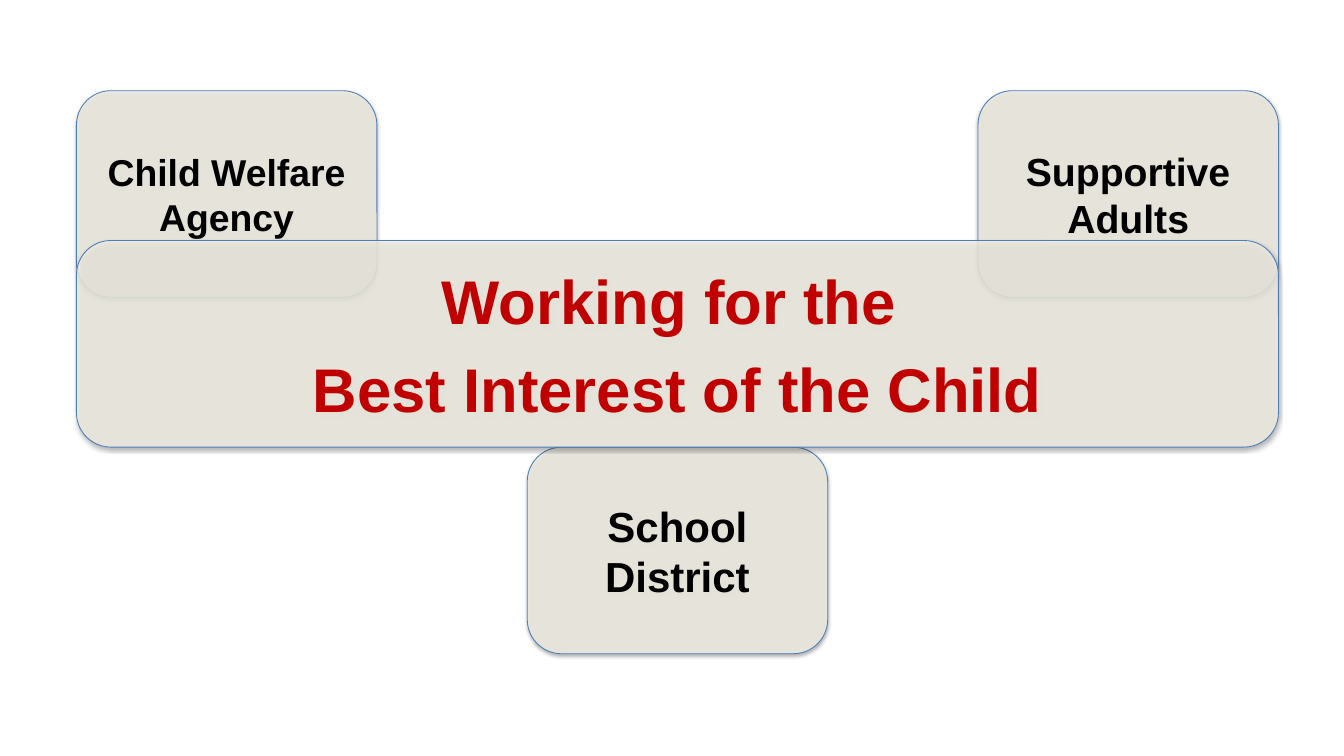
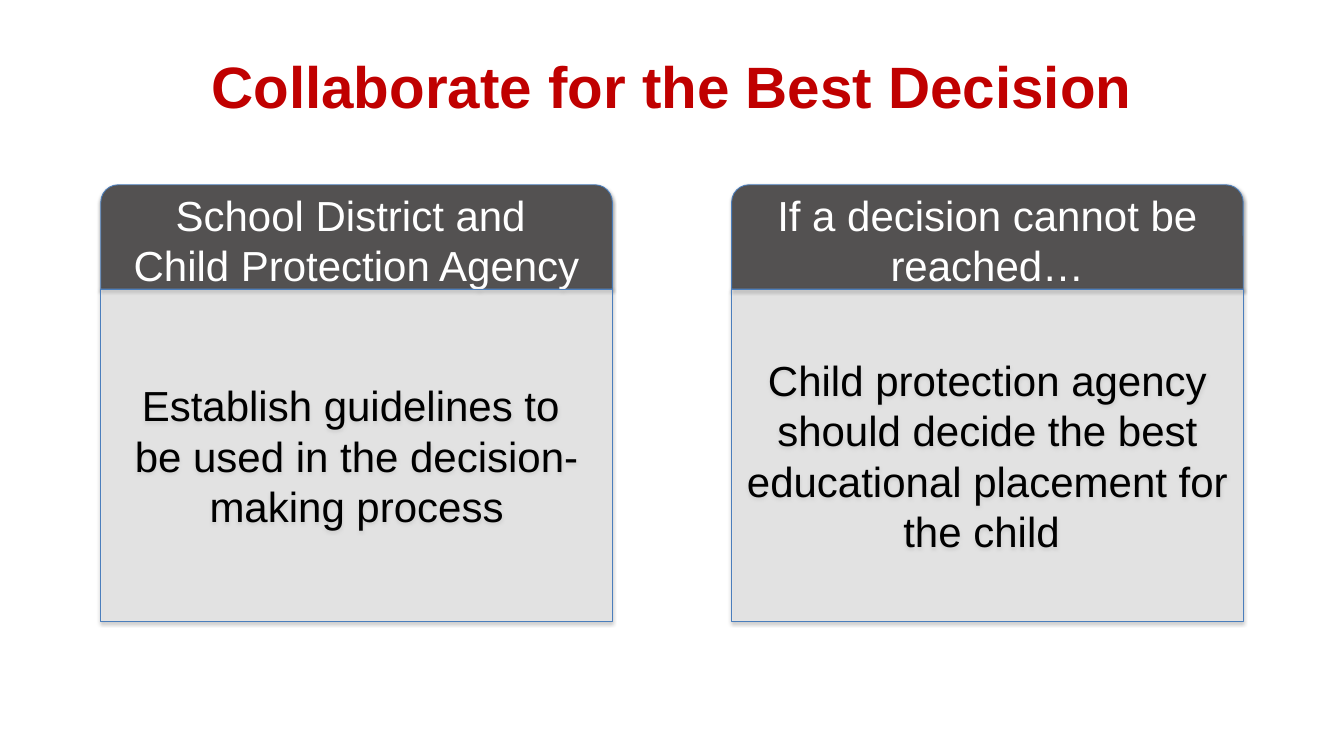
from dataclasses import dataclass

import pptx
import pptx.dml.color
import pptx.enum.shapes
import pptx.enum.text
import pptx.oxml
import pptx.oxml.ns
import pptx.util

SHAPES = pptx.enum.shapes.MSO_SHAPE
ANCHOR = pptx.enum.text.MSO_ANCHOR
CENTER = pptx.enum.text.PP_ALIGN.CENTER
Inches = pptx.util.Inches

WIDTH, HEIGHT = 16, 9
RED, BLACK, WHITE = "C00000", "000000", "FFFFFF"
BEIGE, CHARCOAL, PALE, OUTLINE = "EEECE1", "535151", "F2F2F2", "4B7EBC"

MARGIN, TOP = 0.91, 1.08
COLUMN = (WIDTH - 2 * MARGIN + 0.13) / 4
ROW = 2.46

PANEL_LEFT, PANEL_TOP, PANEL_WIDTH = 1.2, 2.2, 6.09
PANEL_STEP = WIDTH - 2 * PANEL_LEFT - PANEL_WIDTH
HEADER_HEIGHT, BODY_HEIGHT = 1.24, 3.96

SHADOW = (
    '<a:outerShdw {ns} blurRad="39370" dist="22860" dir="5400000" rotWithShape="0">'
    '<a:srgbClr val="000000"><a:alpha val="35000"/></a:srgbClr></a:outerShdw>'
).format(ns=pptx.oxml.ns.nsdecls("a"))


@dataclass(frozen=True)
class Style:
    size: float
    color: str
    bold: bool = False
    space: float = 0


@dataclass(frozen=True)
class Block:
    column: float
    row: float
    columns: float
    lines: tuple[str, ...]
    style: Style


@dataclass(frozen=True)
class Panel:
    header: tuple[str, ...]
    body: tuple[str, ...]


BLOCKS = (
    Block(3, 0, 1, ("Supportive Adults",), Style(33.6, BLACK, True)),
    Block(1.5, 1.725, 1, ("School District",), Style(36, BLACK, True)),
    Block(0, 0, 1, ("Child Welfare Agency",), Style(32, BLACK, True)),
    Block(0, 0.725, 4, ("Working for the ", "Best Interest of the Child"),
          Style(52.8, RED, True, 12.5)),
)
PANELS = (
    Panel(("School District and ", "Child Protection Agency"),
          ("Establish guidelines to ", "be used in the decision-making process")),
    Panel(("If a decision cannot be reached…",),
          ("Child protection agency should decide the best "
           "educational placement for the child ",)),
)
TITLE = Style(50, RED, True)
HEADER = Style(36, WHITE)
BODY = Style(36, BLACK)


def color(value: str) -> pptx.dml.color.RGBColor:
    return pptx.dml.color.RGBColor.from_string(value)


def apply(target, values: dict) -> None:
    for name, value in values.items():
        setattr(target, name, value)


def write(box, lines: tuple[str, ...], style: Style, **frame_format) -> None:
    frame = box.text_frame
    apply(frame, {"word_wrap": True, **frame_format})
    for index, line in enumerate(lines):
        para = frame.add_paragraph() if index else frame.paragraphs[0]
        para.alignment = CENTER
        if index and style.space:
            para.space_before = pptx.util.Pt(style.space)
        span = para.add_run()
        span.text = line
        apply(span.font, {"name": "Arial", "size": pptx.util.Pt(style.size),
                          "bold": style.bold})
        span.font.color.rgb = color(style.color)


def add_card(shapes, preset, left: float, top: float, width: float, height: float,
             fill: str, opacity: int, lines: tuple[str, ...], style: Style) -> None:
    box = shapes.add_shape(preset, Inches(left), Inches(top),
                           Inches(width), Inches(height))
    box.fill.solid()
    box.fill.fore_color.rgb = color(fill)
    box.line.color.rgb = color(OUTLINE)
    box.line.width = pptx.util.Pt(0.75)
    box.shadow.inherit = False
    properties = box._element.spPr
    properties.find(pptx.oxml.ns.qn("a:effectLst")).append(pptx.oxml.parse_xml(SHADOW))
    if opacity < 100:
        tint = properties.find(pptx.oxml.ns.qn("a:solidFill"))[0]
        alpha = tint.makeelement(pptx.oxml.ns.qn("a:alpha"), {"val": str(opacity * 1000)})
        tint.append(alpha)
    write(box, lines, style, vertical_anchor=ANCHOR.MIDDLE)


def add_title(page, text: str) -> None:
    box = page.shapes.add_textbox(Inches(0.05 * WIDTH), Inches(0.6),
                                  Inches(0.9 * WIDTH), Inches(0.84))
    write(box, (text,), TITLE, margin_left=0, margin_right=0,
          margin_top=0, margin_bottom=0)


def build_partners(page) -> None:
    for block in BLOCKS:
        add_card(page.shapes, SHAPES.ROUNDED_RECTANGLE,
                 MARGIN + block.column * COLUMN, TOP + block.row * ROW,
                 block.columns * COLUMN, ROW, BEIGE, 85, block.lines, block.style)


def build_decision(page) -> None:
    add_title(page, "Collaborate for the Best Decision")
    for index, panel in enumerate(PANELS):
        shapes = page.shapes.add_group_shape().shapes
        left = PANEL_LEFT + index * PANEL_STEP
        add_card(shapes, SHAPES.ROUND_2_SAME_RECTANGLE, left, PANEL_TOP,
                 PANEL_WIDTH, HEADER_HEIGHT, CHARCOAL, 100, panel.header, HEADER)
        add_card(shapes, SHAPES.RECTANGLE, left, PANEL_TOP + HEADER_HEIGHT,
                 PANEL_WIDTH, BODY_HEIGHT, PALE, 53, panel.body, BODY)


def main() -> None:
    deck = pptx.Presentation()
    apply(deck, {"slide_width": Inches(WIDTH), "slide_height": Inches(HEIGHT)})
    for build in (build_partners, build_decision):
        build(deck.slides.add_slide(deck.slide_layouts[6]))
    deck.save("out.pptx")


if __name__ == "__main__":
    main()
